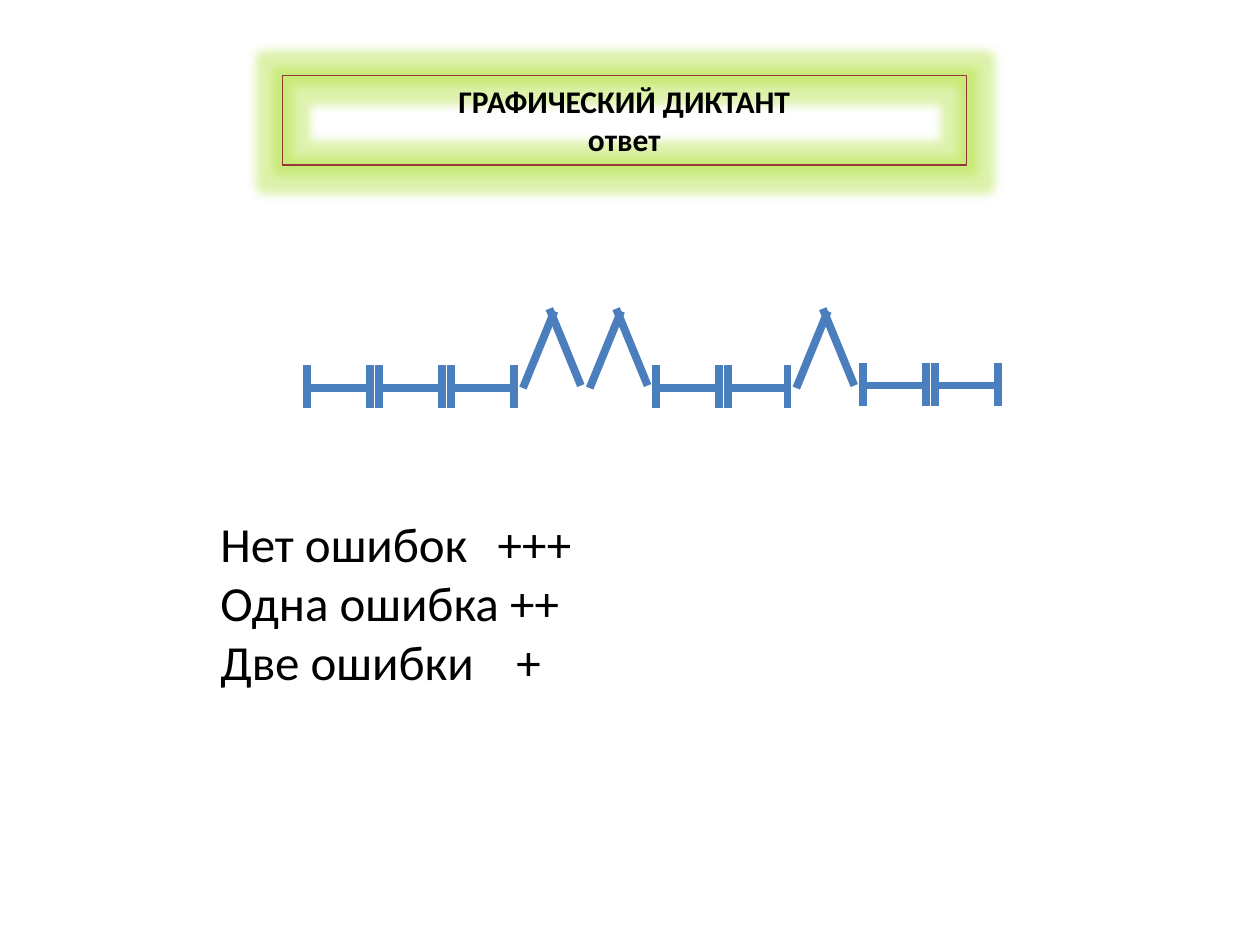
from dataclasses import dataclass
from lxml.etree import SubElement
from pptx import Presentation
from pptx.dml.color import RGBColor
from pptx.enum.shapes import MSO_CONNECTOR as Wire, MSO_SHAPE as Form
from pptx.enum.text import MSO_ANCHOR as Anchor, PP_ALIGN as Align
from pptx.oxml.ns import qn
from pptx.util import Inches, Pt

CELL = 0.1
GAP = 0.7
BASE = 30.8
START = 24.4
BLUE = "4B7EBC"


@dataclass
class Mark:
    kind: str
    wide: float
    lift: float = 0


def size(cells: float) -> int:
    return Inches(cells * CELL)


def color(code: str) -> RGBColor:
    return RGBColor.from_string(code)


def stroke(group, x1: float, y1: float, x2: float, y2: float) -> None:
    line = group.shapes.add_connector(
        Wire.STRAIGHT, size(x1), size(y1), size(x2), size(y2))
    line.line.color.rgb = color(BLUE)
    line.line.width = Pt(4.5)
    SubElement(line._element.spPr, qn("a:effectLst"))


def draw(slide, mark: Mark, left: float) -> None:
    group = slide.shapes.add_group_shape()
    base = BASE - mark.lift
    right = left + mark.wide
    if mark.kind == "bar":
        stroke(group, left, base, right, base)
        for x in (right, left):
            stroke(group, x, base - 1.8, x, base + 1.6)
    else:
        stroke(group, left, base, left + 2.5, base - 6.1)
        stroke(group, right, base - 0.2, right - 2.5, base - 6.3)


def write(frame, lines: list[str], points: int, bold: bool, align) -> None:
    frame.word_wrap = True
    frame.vertical_anchor = Anchor.TOP
    frame.text = "\n".join(lines)
    for para in frame.paragraphs:
        para.alignment = align
        font = para.font
        font.name = "Calibri"
        font.size = Pt(points)
        font.bold = bold
        font.color.rgb = color("000000")


def glow(shape, code: str, radius: float, alpha: int) -> None:
    shape.shadow.inherit = False
    effects = shape._element.spPr.find(qn("a:effectLst"))
    halo = SubElement(effects, qn("a:glow"), rad=str(Pt(radius)))
    tint = SubElement(halo, qn("a:srgbClr"), val=code)
    SubElement(tint, qn("a:alpha"), val=str(alpha * 1000))


def stop(para, cells: float) -> None:
    tabs = SubElement(para._p.get_or_add_pPr(), qn("a:tabLst"))
    SubElement(tabs, qn("a:tab"), pos=str(size(cells)), algn="l")


def main() -> None:
    deck = Presentation()
    deck.slide_width, deck.slide_height = size(100), size(75)
    slide = deck.slides.add_slide(deck.slide_layouts[6])

    title = slide.shapes.add_shape(
        Form.RECTANGLE, size(22.4), size(6), size(54.3), size(7.1))
    title.fill.background()
    title.line.color.rgb = color("953735")
    title.line.width = Pt(0.75)
    glow(title, "AADF2D", 11, 40)
    write(title.text_frame, ["ГРАФИЧЕСКИЙ ДИКТАНТ", "ответ"],
          18, True, Align.CENTER)

    key = slide.shapes.add_textbox(
        size(16.5), size(40.3), size(68.9), size(19.9))
    frame = key.text_frame
    write(frame, ["Нет ошибок\t+++", "Одна ошибка ++", "Две ошибки\t+"],
          28, False, Align.LEFT)
    stop(frame.paragraphs[0], 22)
    stop(frame.paragraphs[2], 23.5)

    bar, tent = Mark("bar", 5), Mark("tent", 4.6)
    short, high = Mark("bar", 4.7), Mark("bar", 5, 0.2)
    left = START
    for mark in (bar, bar, bar, tent, tent, bar, short, tent, high, high):
        draw(slide, mark, left)
        left += mark.wide + GAP

    deck.save("out.pptx")


if __name__ == "__main__":
    main()
